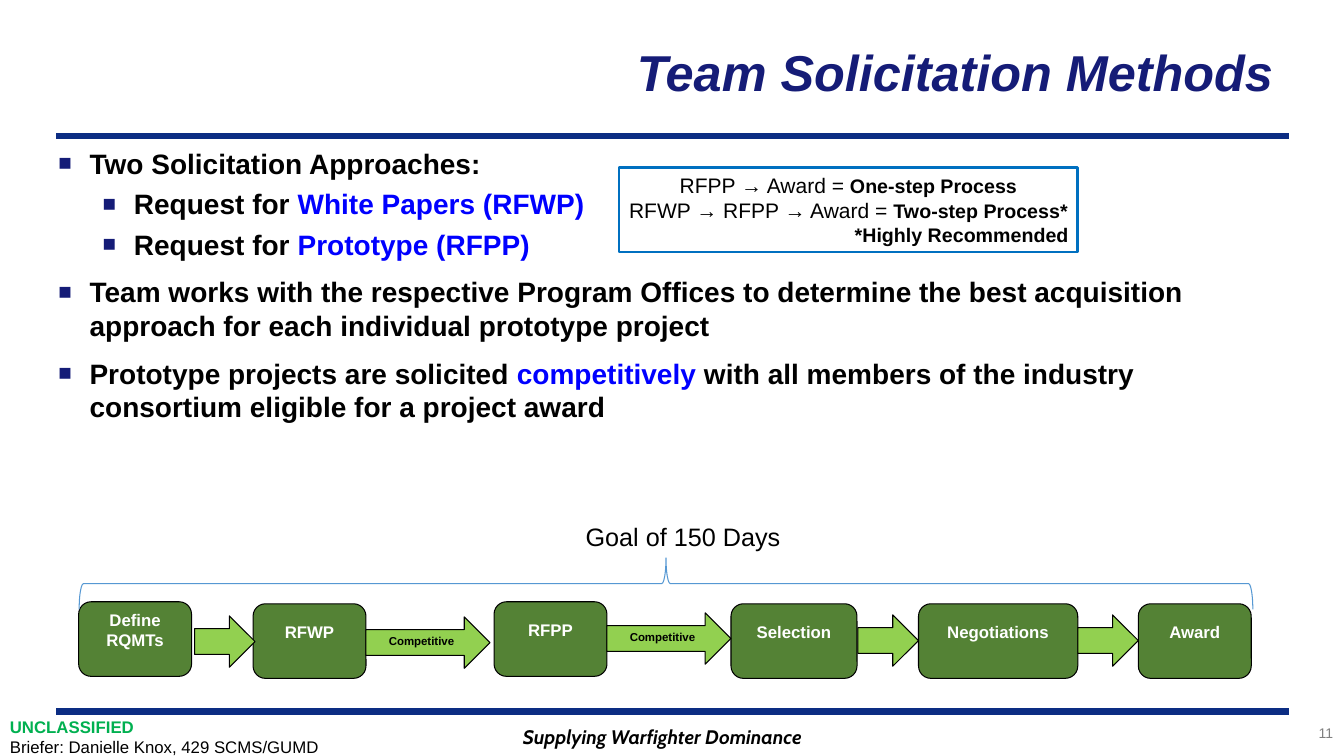
from lxml import etree
from pptx import Presentation
from pptx import util as u
from pptx.dml.color import RGBColor
from pptx.enum import shapes, text
from pptx.oxml.ns import qn

PX = 9144  # 100 px to the inch
THEME = {
    "font": "Arial", "motto_font": "Cabin",
    "rule": "0C2D83", "title": "151C77", "black": "000000", "white": "FFFFFF",
    "marking": "00B050", "key": "0000FF", "number": "808080", "frame": "0070C0",
    "step": "548235", "arrow": "92D050", "brace": "5698D3",
    "title_size": 36, "body_size": 20, "goal_size": 18, "lead_size": 15,
    "motto_size": 14, "step_size": 12, "number_size": 10, "arrow_size": 8.2,
}
LEFT, CENTER, RIGHT = text.PP_ALIGN.LEFT, text.PP_ALIGN.CENTER, text.PP_ALIGN.RIGHT
SHAPE = shapes.MSO_SHAPE

prs = Presentation()
prs.slide_width, prs.slide_height = 1333 * PX, 750 * PX
s = prs.slides.add_slide(prs.slide_layouts[6])


def add_box(x, y, w, h, kind=None, fill=None, line=None, width=0.75, inset=(10, 5)):
    """Add a text box, or a preset shape when a kind is given."""
    at = [v * PX for v in (x, y, w, h)]
    if kind is None:
        sp = s.shapes.add_textbox(*at)
    else:
        sp = s.shapes.add_shape(kind, *at)
        sp.shadow.inherit = False
        if fill:
            sp.fill.solid()
            sp.fill.fore_color.rgb = RGBColor.from_string(THEME[fill])
        else:
            sp.fill.background()
        sp.line.color.rgb = RGBColor.from_string(THEME[line])
        sp.line.width = u.Pt(width)
    tf = sp.text_frame
    tf.word_wrap = True
    tf.vertical_anchor = text.MSO_ANCHOR.TOP
    tf.margin_left = tf.margin_right = inset[0] * PX
    tf.margin_top = tf.margin_bottom = inset[1] * PX
    return sp


def add_text(sp, runs, size, align=LEFT, font="font", first=True):
    """Write one paragraph of (words, colour, style) runs; style holds b and i."""
    tf = sp.text_frame
    p = tf.paragraphs[0] if first else tf.add_paragraph()
    p.alignment = align
    for words, color, style, *own_size in runs:
        r = p.add_run()
        r.text = words
        r.font.name = THEME[font]
        r.font.size = u.Pt(THEME[own_size[0] if own_size else size])
        r.font.bold, r.font.italic = "b" in style, "i" in style
        r.font.color.rgb = RGBColor.from_string(THEME[color])
    return p


# Rules above and below the content
for y in (706, 135):
    rule = s.shapes.add_connector(shapes.MSO_CONNECTOR.STRAIGHT, 56 * PX, y * PX, 1278 * PX, y * PX)
    rule.line.color.rgb = RGBColor.from_string(THEME["rule"])
    rule.line.width = u.Pt(4.5)
    etree.SubElement(rule._element.spPr, qn("a:effectLst"))

# Footer
sp = add_box(0, 706, 353, 50)
add_text(sp, [("UNCLASSIFIED", "marking", "b")], "step_size")
add_text(sp, [("Briefer: Danielle Knox, 429 SCMS/GUMD", "black", "")], "step_size", first=False)
sp = add_box(322, 714, 670, 34)
add_text(sp, [("Supplying Warfighter Dominance", "black", "bi")], "motto_size", CENTER, "motto_font")
sp = add_box(1165, 714, 167, 33)
add_text(sp, [("11", "number", "")], "number_size", RIGHT)

# Title
sp = add_box(236, 8, 1037, 125)
sp.text_frame.vertical_anchor = text.MSO_ANCHOR.MIDDLE
add_text(sp, [("Team Solicitation Methods", "title", "bi")], "title_size", RIGHT)

# Bulleted body: level, runs
bullets = [
    (0, [("Two Solicitation Approaches:", "black", "b")]),
    (1, [("Request for ", "black", "b"), ("White Papers (RFWP)", "key", "b")]),
    (1, [("Request for ", "black", "b"), ("Prototype (RFPP)", "key", "b")]),
    (0, [("Team works with the respective Program Offices to determine the best acquisition "
          "approach for each individual prototype project", "black", "b")]),
    (0, [("Prototype projects are solicited ", "black", "b"), ("competitively", "key", "b"),
         (" with all members of the industry consortium eligible for a project award", "black", "b")]),
]
body = add_box(48, 140, 1225, 306)
for i, (level, runs) in enumerate(bullets):
    p = add_text(body, runs, "body_size", first=i == 0)
    p.level = level
    pPr = p._p.get_or_add_pPr()
    pPr.set("marL", str((31, 75)[level] * PX))
    pPr.set("indent", str(-31 * PX))
    color = etree.SubElement(pPr, qn("a:buClr"))
    etree.SubElement(color, qn("a:srgbClr"), val=THEME["title"])
    etree.SubElement(pPr, qn("a:buSzPct"), val="80000")
    etree.SubElement(pPr, qn("a:buFont"), typeface=THEME["font"])
    etree.SubElement(pPr, qn("a:buChar"), char="■")
    if i:
        p.space_before = u.Pt((10, 5)[level])

# Callout with the two processes
callout = add_box(614, 166, 455, 84, SHAPE.RECTANGLE, "white", "frame", 2, inset=(9, 5))
add_text(callout, [("RFPP → Award = ", "black", "", "lead_size"),
                   ("One-step Process", "black", "b")], "motto_size", CENTER)
add_text(callout, [("RFWP → RFPP → Award = ", "black", "", "lead_size"),
                   ("Two-step Process*", "black", "b")], "motto_size", CENTER, first=False)
add_text(callout, [("*Highly Recommended", "black", "b")], "motto_size", RIGHT, first=False)

# Process steps: x, y, width, label, line spacing
steps = [
    (78, 597, 112, "Define RQMTs", 1), (251, 599, 112, "RFWP", 1.5),
    (490, 597, 112, "RFPP", 1.5), (725, 599, 125, "Selection", 1.5),
    (911, 599, 158, "Negotiations", 1.5), (1129, 599, 112, "Award", 1.5),
]
for x, y, w, label, spacing in steps:
    sp = add_box(x, y, w, 74, SHAPE.ROUNDED_RECTANGLE, "step", "black", inset=(7, 4))
    p = add_text(sp, [(label, "white", "b")], "step_size", CENTER)
    p.line_spacing = float(spacing)

# Arrows between the steps: x, y, width, label
arrows = [(193, 611, 60, ""), (363, 612, 123, "Competitive"), (602, 608, 123, "Competitive"),
          (851, 610, 60, ""), (1069, 610, 60, "")]
for x, y, w, label in arrows:
    sp = add_box(x, y, w, 51, SHAPE.RIGHT_ARROW, "arrow", "black", inset=(7, 4))
    if label:
        add_text(sp, [(label, "black", "b")], "arrow_size", CENTER)

# Brace over the whole process
brace = add_box(635, -3, 51, 1164, SHAPE.LEFT_BRACE, line="brace")
brace.rotation = 90
goal = add_box(571, 512, 215, 40)
goal.text_frame.word_wrap = False
add_text(goal, [("Goal of 150 Days", "black", "")], "goal_size")

prs.save("out.pptx")
